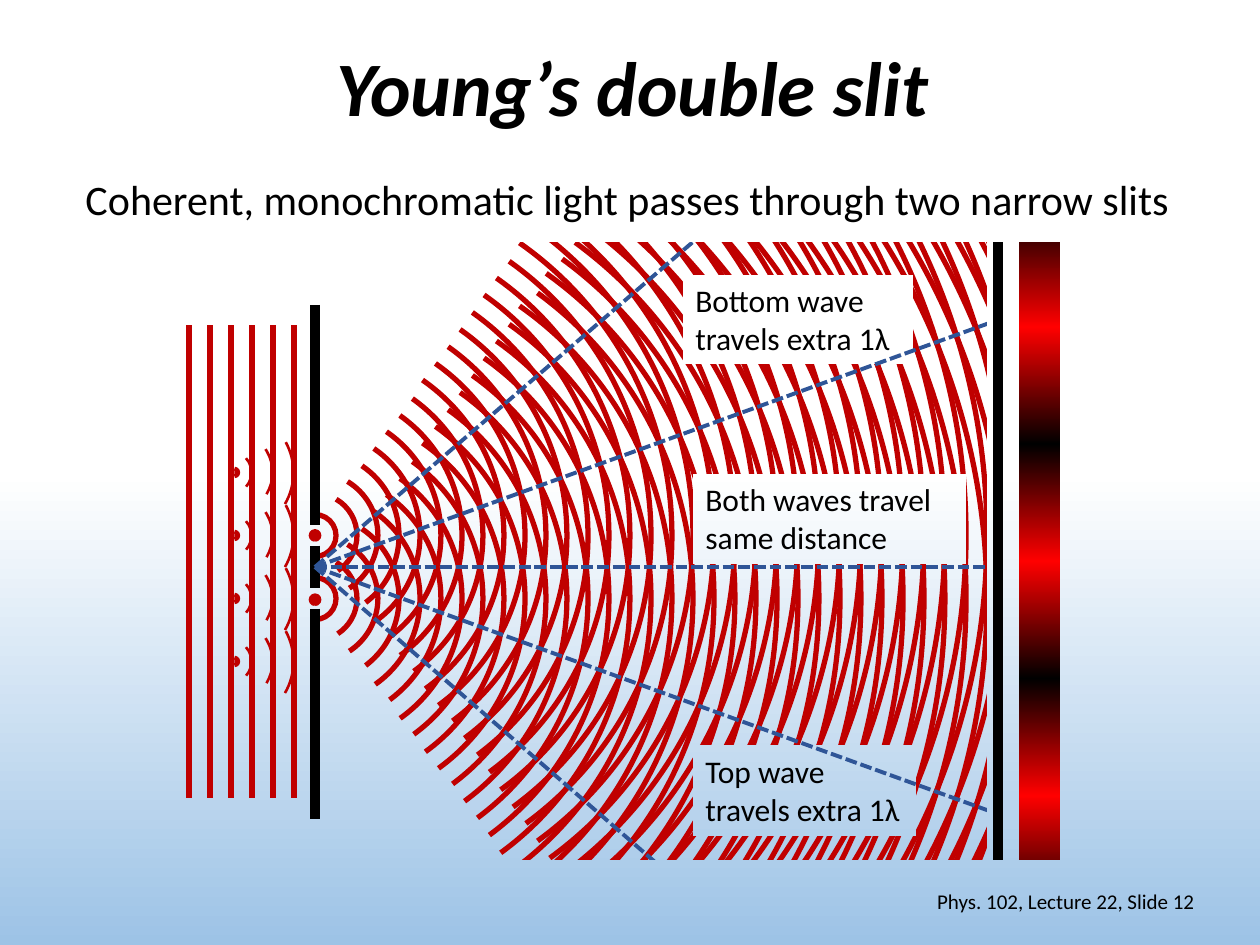
import copy

import lxml.etree
import pptx
import pptx.dml.color
import pptx.enum.dml
import pptx.enum.shapes
import pptx.enum.text
import pptx.oxml.ns
import pptx.util

Inches = pptx.util.Inches
SHAPE = pptx.enum.shapes.MSO_SHAPE
ALIGN = pptx.enum.text.PP_ALIGN
ANCHOR = pptx.enum.text.MSO_ANCHOR
AUTO_SIZE = pptx.enum.text.MSO_AUTO_SIZE

COLORS = {"black": "000000", "white": "FFFFFF", "sky": "9DC3E6", "wave": "C00000",
          "ray": "2F5597", "bright": "FF0000"}

# Start and end of each wavefront, from the slit outwards
WAVEFRONTS = [
    (162, 53.52), (180.17, 34.27), (180.72, 34.13), (182.37, 31.76), (182.46, 32.97),
    (182.75, 32.17), (183.15, 32.77), (183.27, 32.38), (182.82, 32.54), (183, 32.38),
    (183.12, 32.05), (183.1, 32.14), (183.12, 32.08), (183.07, 32.16), (183.11, 32.31),
    (183.18, 32.33), (182.98, 32.26), (183.64, 32.35), (183.25, 32.37), (183.64, 32.36),
    (183.7, 32.38), (183.73, 31.25), (183.77, 29.19), (185.74, 27.66), (187.22, 26.49),
    (188.79, 25.48), (189.94, 24.2), (191.17, 23.18), (192.05, 22.07), (193.02, 21.22),
    (194.04, 20.44), (194.8, 19.96), (195.52, 19.01), (196.36, 18.42), (196.83, 17.8),
    (197.37, 17.37)]
WAVELETS = [(190.21, 25.45), (195.76, 18.68), (198.77, 18.06)]
WAVELENGTH = 1 / 6
SLIT_X = 2.5


def rgb(name):
    return pptx.dml.color.RGBColor.from_string(COLORS[name])


def set_values(target, values):
    for name, value in values.items():
        setattr(target, name, value)


class SlideBuilder:
    font_name = "Calibri"

    def __init__(self, presentation):
        self.slide = presentation.slides.add_slide(presentation.slide_layouts[5])
        self.shapes = self.slide.shapes

    def group(self):
        """Send the shapes that follow into a new group."""
        self.shapes = self.slide.shapes.add_group_shape().shapes

    def ungroup(self):
        self.shapes = self.slide.shapes

    def gradient(self, fill, stops, angle):
        fill.gradient()
        stop_list = fill.gradient_stops
        first = stop_list[0]._gs
        for _ in range(len(stops) - len(stop_list)):
            first.addnext(copy.deepcopy(first))
        for stop, (position, color) in zip(fill.gradient_stops, stops):
            stop.position = position
            stop.color.rgb = rgb(color)
        fill.gradient_angle = angle

    def line(self, start, end, color, width, dash=None):
        points = [Inches(value) for value in (*start, *end)]
        connector = self.shapes.add_connector(
            pptx.enum.shapes.MSO_CONNECTOR.STRAIGHT, *points)
        connector.line.color.rgb = rgb(color)
        set_values(connector.line, {"width": pptx.util.Pt(width), "dash_style": dash})
        lxml.etree.SubElement(connector._element.spPr, pptx.oxml.ns.qn("a:effectLst"))

    def arc(self, center, size, angles, width, filled=False, rotation=0):
        left, top = (value - size / 2 for value in center)
        shape = self.shapes.add_shape(
            SHAPE.ARC, Inches(left), Inches(top), Inches(size), Inches(size))
        shape.adjustments[0], shape.adjustments[1] = angles
        shape.rotation = rotation
        shape.shadow.inherit = False
        if filled:
            shape.fill.solid()
            shape.fill.fore_color.rgb = rgb("wave")
        else:
            shape.fill.background()
        shape.line.color.rgb = rgb("wave")
        shape.line.width = pptx.util.Pt(width)

    def rectangle(self, *box):
        shape = self.shapes.add_shape(SHAPE.RECTANGLE, *map(Inches, box))
        shape.shadow.inherit = False
        shape.line.fill.background()
        return shape

    def mask(self, *box):
        """A rectangle filled with the slide background."""
        shape = self.rectangle(*box)
        shape._element.set("useBgFill", "1")
        return shape

    def fringe(self, *box):
        shape = self.rectangle(*box)
        self.gradient(shape.fill, [(0, "black"), (0.5, "bright"), (1, "black")], 0)
        shape.rotation = 270

    def fill_text(self, shape, text, size, align=ALIGN.LEFT, anchor=ANCHOR.TOP,
                  auto_size=AUTO_SIZE.SHAPE_TO_FIT_TEXT, spacing=None, **font_values):
        frame = shape.text_frame
        set_values(frame, {"word_wrap": True, "vertical_anchor": anchor,
                           "auto_size": auto_size})
        paragraph = frame.paragraphs[0]
        set_values(paragraph, {"alignment": align, "line_spacing": spacing})
        run = paragraph.add_run()
        run.text = text
        set_values(run.font, {"name": self.font_name, "size": pptx.util.Pt(size),
                              **font_values})
        run.font.color.rgb = rgb("black")

    def text(self, box, text, size, **style):
        self.fill_text(self.shapes.add_textbox(*map(Inches, box)), text, size, **style)

    def title(self, box, text):
        shape = self.slide.shapes.title
        set_values(shape, dict(zip(("left", "top", "width", "height"), map(Inches, box))))
        self.fill_text(shape, text, 44, ALIGN.CENTER, ANCHOR.MIDDLE, AUTO_SIZE.NONE,
                       spacing=0.9, bold=True, italic=True)
        # Bring the title in front of the masks
        self.slide.shapes._spTree.append(shape._element)


def main():
    presentation = pptx.Presentation()
    set_values(presentation, {"slide_width": Inches(10), "slide_height": Inches(7.5)})
    builder = SlideBuilder(presentation)
    builder.gradient(builder.slide.background.fill, [(0.5, "white"), (1, "sky")], 270)

    # Waves spreading from the two slits
    for slit_y in (4.75, 4.25):
        builder.group()
        for number, angles in enumerate(WAVEFRONTS, 1):
            builder.arc((SLIT_X, slit_y), 2 * number * WAVELENGTH, angles, 3)
    builder.ungroup()

    # Barrier with two gaps
    for top, bottom in ((4.33, 4.67), (2.42, 4.17), (4.83, 6.5)):
        builder.line((SLIT_X, top), (SLIT_X, bottom), "black", 6)

    def plane_waves(first_x):
        builder.group()
        for number in range(3):
            x = first_x + number * WAVELENGTH
            builder.line((x, 2.58), (x, 6.33), "wave", 3)
        builder.ungroup()

    plane_waves(1.5)

    # Labels
    for box, text in (
            ((5.42, 2.18, 1.83, 0.71), "Bottom wave travels extra 1λ"),
            ((5.5, 5.92, 1.77, 0.71), "Top wave travels extra 1λ"),
            ((5.5, 3.76, 2.17, 0.71), "Both waves travel same distance")):
        builder.fill_text(builder.mask(*box), text, 18)

    # Rays from the middle of the slits
    builder.group()
    for end in ((8.25, 2.42), (8.83, 4.5), (8.25, 6.58), (5.5, 1.92), (5.67, 7.25)):
        builder.line((SLIT_X, 4.5), end, "ray", 2.25,
                     pptx.enum.dml.MSO_LINE.SQUARE_DOT)
    builder.ungroup()

    # Screen and interference fringes
    builder.mask(7.83, 1.25, 2.17, 5.67)
    builder.group()
    for top in (4.29, 2.43, 6.15):
        builder.fringe(7.32, top, 1.86, 0.33)
    builder.ungroup()
    builder.line((7.92, 1.75), (7.92, 7.08), "black", 6)

    # Lower edge and footer
    builder.mask(2.42, 6.83, 6.17, 0.67)
    builder.text((7.06, 6.95, 2.52, 0.4), "Phys. 102, Lecture 22, Slide 12", 12,
                 align=ALIGN.RIGHT, anchor=ANCHOR.MIDDLE, auto_size=AUTO_SIZE.NONE)

    # Wavelets on the incoming wave
    for row in range(4):
        y = 3.75 + 0.5 * row
        builder.group()
        for number, angles in enumerate(WAVELETS, 1):
            builder.arc((1.83, y), 2 * number * WAVELENGTH, angles, 1.5)
        builder.arc((1.86, y), 0.06, (108.49, 0), 2.25, filled=True, rotation=90)
    builder.ungroup()
    plane_waves(2)

    # Point sources in the slits
    builder.group()
    for y in (4.25, 4.76):
        builder.arc((SLIT_X, y), 0.08, (1.58, 215.84), 1.5, filled=True, rotation=90)
    builder.ungroup()

    # Upper edge, title and lead sentence
    builder.mask(2.42, 0.75, 6.17, 1.17)
    builder.title((0.71, 0, 8.62, 1.45), "Young’s double slit")
    builder.text((0.58, 1.33, 8.92, 0.5),
                 "Coherent, monochromatic light passes through two narrow slits", 24)

    presentation.save("out.pptx")


if __name__ == "__main__":
    main()
